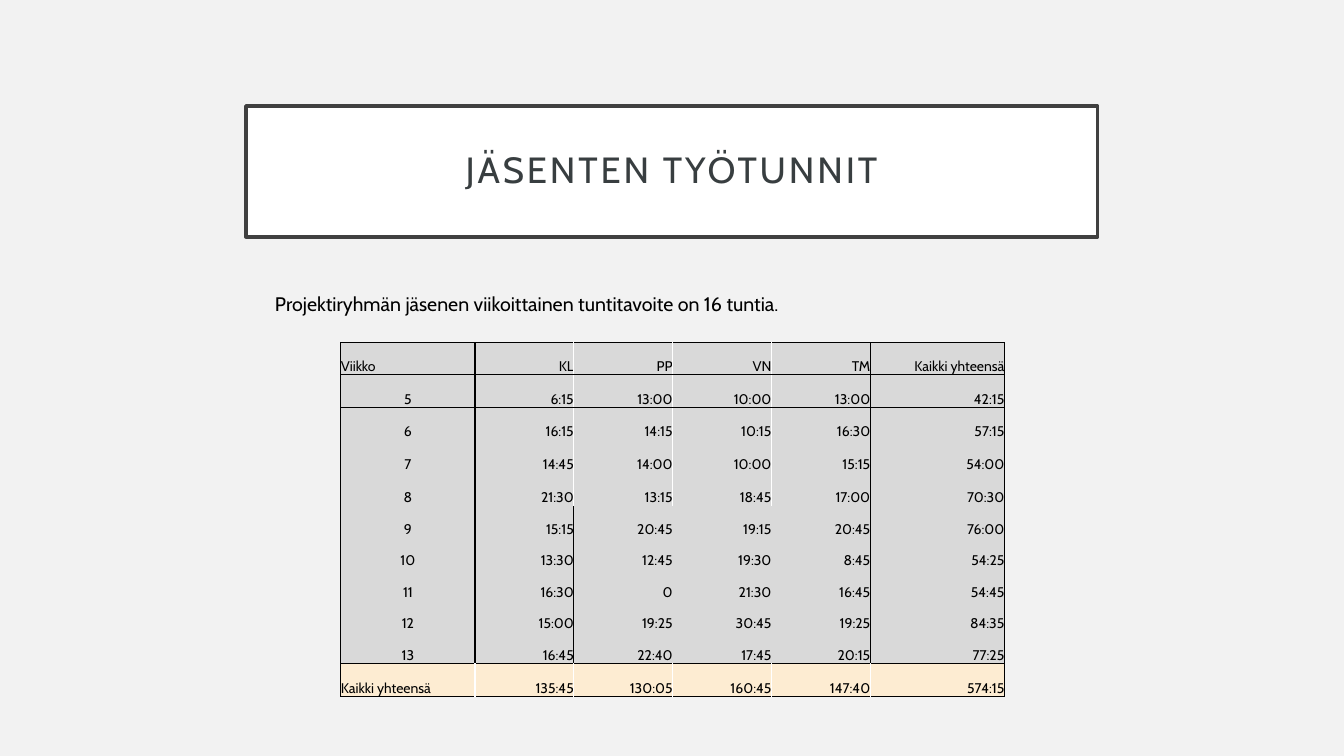
"""Build the slide of weekly working hours per project member."""
from dataclasses import dataclass

from lxml.etree import SubElement
from pptx import Presentation
from pptx.dml.color import RGBColor
from pptx.enum.text import MSO_ANCHOR, MSO_AUTO_SIZE, PP_ALIGN
from pptx.oxml.ns import qn
from pptx.slide import Slide
from pptx.table import Table, _Cell
from pptx.text.text import TextFrame
from pptx.util import Cm, Pt

FONT = "Cabin"
BACKGROUND = RGBColor(0xF2, 0xF2, 0xF2)
WHITE = RGBColor(0xFF, 0xFF, 0xFF)
BLACK = RGBColor(0x00, 0x00, 0x00)
FRAME = RGBColor(0x40, 0x40, 0x40)
TITLE_TEXT = RGBColor(0x38, 0x3E, 0x40)
GREY = RGBColor(0xD9, 0xD9, 0xD9)
CREAM = RGBColor(0xFD, 0xEC, 0xD2)
PLAIN_TABLE_STYLE = "{2D5ABB26-0587-4C30-8999-92F81FD0307C}"

HOURS = [
    ("Viikko", "KL", "PP", "VN", "TM", "Kaikki yhteensä"),
    ("5", "6:15", "13:00", "10:00", "13:00", "42:15"),
    ("6", "16:15", "14:15", "10:15", "16:30", "57:15"),
    ("7", "14:45", "14:00", "10:00", "15:15", "54:00"),
    ("8", "21:30", "13:15", "18:45", "17:00", "70:30"),
    ("9", "15:15", "20:45", "19:15", "20:45", "76:00"),
    ("10", "13:30", "12:45", "19:30", "8:45", "54:25"),
    ("11", "16:30", "0", "21:30", "16:45", "54:45"),
    ("12", "15:00", "19:25", "30:45", "19:25", "84:35"),
    ("13", "16:45", "22:40", "17:45", "20:15", "77:25"),
    ("Kaikki yhteensä", "135:45", "130:05", "160:45", "147:40", "574:15"),
]
COLUMN_WIDTHS = [3.38] + [2.49] * 4 + [3.38]
ROW_HEIGHTS = [0.8] + [0.83] * 4 + [0.8] + [0.79] * 4 + [0.84]
TOTAL_ROW = len(HOURS) - 1
LAST_COLUMN = len(COLUMN_WIDTHS) - 1
LAST_WHITE_LINED_WEEK = 4


@dataclass(frozen=True)
class TextStyle:
    """Look of one line of text."""

    size: float
    color: RGBColor = BLACK
    alignment: PP_ALIGN = PP_ALIGN.LEFT
    line_spacing: float = 1.0


def write_text(frame: TextFrame, text: str, style: TextStyle) -> None:
    """Put one styled line into a text frame."""
    paragraph = frame.paragraphs[0]
    paragraph.alignment = style.alignment
    paragraph.line_spacing = style.line_spacing
    run = paragraph.add_run()
    run.text = text
    for name, value in {"name": FONT, "size": Pt(style.size), "bold": False}.items():
        setattr(run.font, name, value)
    run.font.color.rgb = style.color


def add_title(slide: Slide) -> None:
    """Format the title placeholder as a framed box."""
    title = slide.shapes.title
    frame = title.text_frame
    box = {"left": 6.2, "top": 2.67, "width": 21.46, "height": 3.3}
    for name, value in box.items():
        setattr(title, name, Cm(value))
    for side in ("left", "top", "right", "bottom"):
        setattr(frame, f"margin_{side}", Cm(0.51))
    frame_format = {
        "vertical_anchor": MSO_ANCHOR.MIDDLE,
        "word_wrap": True,
        "auto_size": MSO_AUTO_SIZE.NONE,
    }
    for name, value in frame_format.items():
        setattr(frame, name, value)
    title.fill.solid()
    title.fill.fore_color.rgb = WHITE
    title.line.color.rgb = FRAME
    title.line.width = Pt(2.5)
    write_text(frame, "JÄSENTEN TYÖTUNNIT", TextStyle(26, TITLE_TEXT, PP_ALIGN.CENTER, 0.9))
    frame.paragraphs[0].runs[0].font._element.set("spc", "200")


def add_goal(slide: Slide) -> None:
    """Add the sentence about the weekly goal."""
    goal = slide.shapes.add_textbox(Cm(6.68), Cm(7.24), Cm(19.28), Cm(0.86))
    goal.text_frame.word_wrap = True
    goal.text_frame.auto_size = MSO_AUTO_SIZE.SHAPE_TO_FIT_TEXT
    write_text(
        goal.text_frame,
        "Projektiryhmän jäsenen viikoittainen tuntitavoite on 16 tuntia.",
        TextStyle(14),
    )


def vertical_color(row: int, edge: int) -> RGBColor | None:
    """Return the colour of a column edge beside a row."""
    if edge in (0, LAST_COLUMN + 1):
        return BLACK
    if row == TOTAL_ROW:
        return WHITE
    if edge in (1, LAST_COLUMN):
        return BLACK
    return WHITE if row <= LAST_WHITE_LINED_WEEK else None


def horizontal_color(edge: int) -> RGBColor | None:
    """Return the colour of a row edge."""
    return BLACK if edge in (0, 1, TOTAL_ROW, TOTAL_ROW + 1) else None


def set_borders(cell: _Cell, row: int, column: int) -> None:
    """Draw the borders of one cell."""
    borders = {
        "a:lnL": vertical_color(row, column),
        "a:lnR": vertical_color(row, column + 1),
        "a:lnT": horizontal_color(row),
        "a:lnB": horizontal_color(row + 1),
    }
    properties = cell._tc.get_or_add_tcPr()
    for tag, color in borders.items():
        if color is not None:
            line = SubElement(properties, qn(tag), w=str(Pt(1)))
            fill = SubElement(line, qn("a:solidFill"))
            SubElement(fill, qn("a:srgbClr"), val=str(color))


def cell_alignment(row: int, column: int) -> PP_ALIGN:
    """Align numbers right, weeks in the middle and labels left."""
    if column > 0:
        return PP_ALIGN.RIGHT
    return PP_ALIGN.LEFT if row in (0, TOTAL_ROW) else PP_ALIGN.CENTER


def fill_cell(table: Table, row: int, column: int, text: str) -> None:
    """Write and format one cell."""
    cell = table.cell(row, column)
    cell_format = {
        "margin_left": 0,
        "margin_right": 0,
        "margin_top": 0,
        "margin_bottom": 0,
        "vertical_anchor": MSO_ANCHOR.BOTTOM,
    }
    for name, value in cell_format.items():
        setattr(cell, name, value)
    set_borders(cell, row, column)
    cell.fill.solid()
    cell.fill.fore_color.rgb = CREAM if row == TOTAL_ROW else GREY
    style = TextStyle(10, alignment=cell_alignment(row, column))
    write_text(cell.text_frame, text, style)


def add_hours(slide: Slide) -> None:
    """Add the table of hours."""
    table = slide.shapes.add_table(
        len(HOURS), len(COLUMN_WIDTHS), Cm(8.59), Cm(8.64),
        Cm(sum(COLUMN_WIDTHS)), Cm(sum(ROW_HEIGHTS)),
    ).table
    table.first_row = table.horz_banding = False
    table._tbl.tblPr.find(qn("a:tableStyleId")).text = PLAIN_TABLE_STYLE
    for column, width in zip(table.columns, COLUMN_WIDTHS):
        column.width = Cm(width)
    for row, height in zip(table.rows, ROW_HEIGHTS):
        row.height = Cm(height)
    for row_index, texts in enumerate(HOURS):
        for column_index, text in enumerate(texts):
            fill_cell(table, row_index, column_index, text)


def main() -> None:
    """Build and save the presentation."""
    presentation = Presentation()
    presentation.slide_width, presentation.slide_height = Cm(33.87), Cm(19.05)
    slide = presentation.slides.add_slide(presentation.slide_layouts[5])
    slide.background.fill.solid()
    slide.background.fill.fore_color.rgb = BACKGROUND
    add_title(slide)
    add_goal(slide)
    add_hours(slide)
    presentation.save("out.pptx")


if __name__ == "__main__":
    main()
